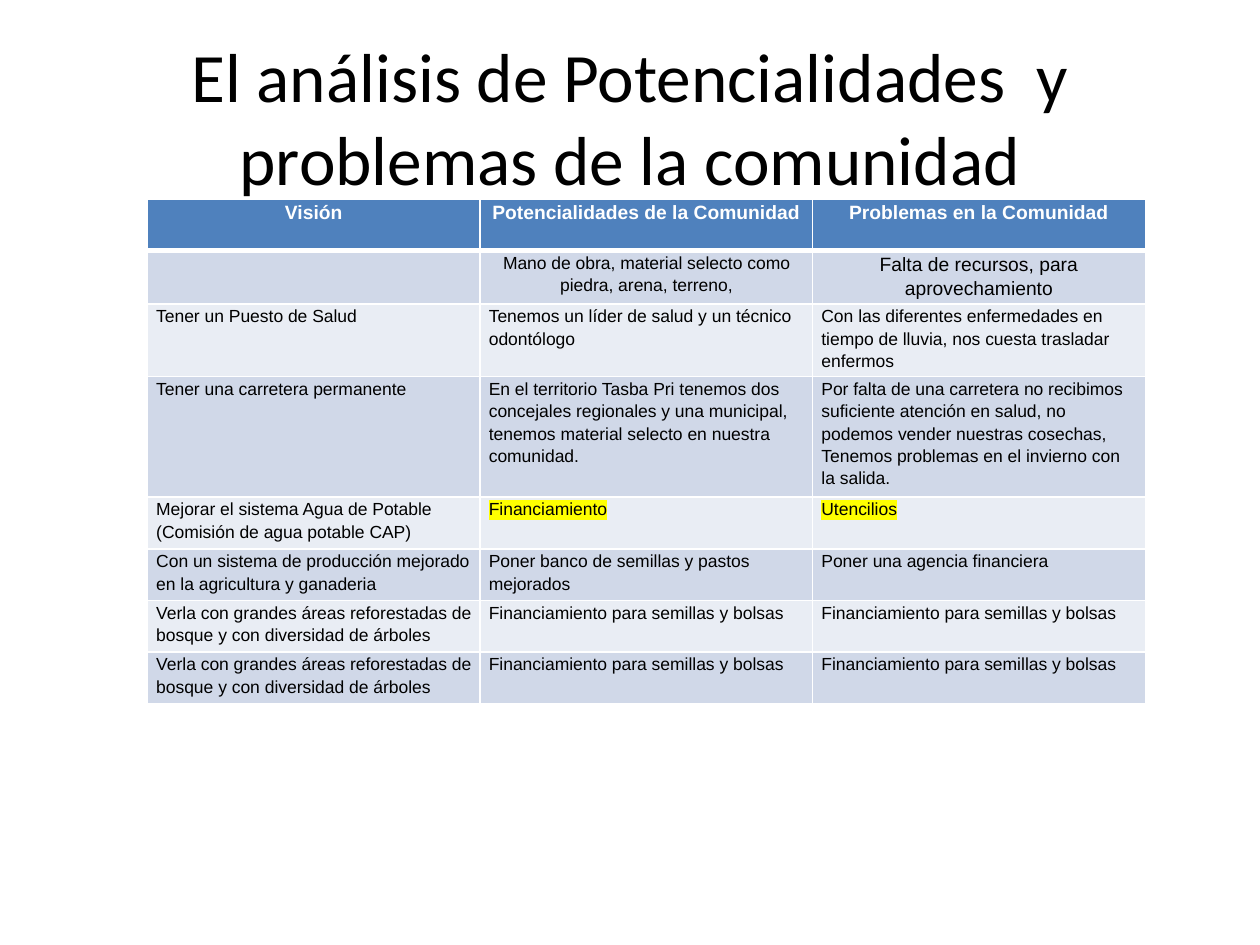
from lxml.etree import SubElement
from pptx import Presentation
from pptx.dml.color import RGBColor
from pptx.enum.text import MSO_ANCHOR, PP_ALIGN
from pptx.oxml.ns import qn
from pptx.util import Inches, Pt

THEME = {
    "title_font": "Calibri", "body_font": "Arial",
    "title_size": 39.6, "header_size": 11, "body_size": 10,
    "text": "000000", "header_text": "FFFFFF", "header_fill": "4F81BD",
    "bands": ("E9EDF4", "D0D8E8"), "border": "FFFFFF", "highlight": "FFFF00",
}
REFOREST = ("Verla con grandes áreas reforestadas de bosque y con diversidad de árboles",
            "Financiamiento para semillas y bolsas", "Financiamiento para semillas y bolsas")
ROWS = [
    ("Visión", "Potencialidades de la Comunidad", "Problemas en la Comunidad"),
    ("", "Mano de obra, material selecto como piedra, arena, terreno,",
     "Falta de recursos, para aprovechamiento"),
    ("Tener un Puesto de Salud", "Tenemos un líder de salud y un técnico odontólogo",
     "Con las diferentes enfermedades en tiempo de lluvia, nos cuesta trasladar enfermos"),
    ("Tener una carretera permanente",
     "En el territorio Tasba Pri tenemos dos concejales regionales y una municipal, "
     "tenemos material selecto en nuestra comunidad.",
     "Por falta de una carretera no recibimos suficiente atención en salud, no podemos vender "
     "nuestras cosechas, Tenemos problemas en el invierno con la salida."),
    ("Mejorar el sistema Agua de Potable (Comisión de agua potable CAP)",
     "Financiamiento", "Utencilios"),
    ("Con un sistema de producción mejorado en la agricultura y ganaderia",
     "Poner banco de semillas y pastos mejorados", "Poner una agencia financiera"),
    REFOREST,
    REFOREST,
]
HIGHLIGHTED = {"Financiamiento", "Utencilios"}


def write(paragraph, text, font, size, color, bold=False):
    run = paragraph.add_run()
    run.text = text
    run.font.color.rgb = RGBColor.from_string(color)
    for key, value in {"name": font, "size": Pt(size), "bold": bold}.items():
        setattr(run.font, key, value)
    if text in HIGHLIGHTED:
        mark = SubElement(run.font._element, qn("a:highlight"))
        SubElement(mark, qn("a:srgbClr"), val=THEME["highlight"])
        run.font.fill._xPr.find(qn("a:solidFill")).addnext(mark)


def add_borders(cell, widths):
    properties = cell._tc.get_or_add_tcPr()
    for index, (side, width) in enumerate(widths.items()):
        line = SubElement(properties, qn(f"a:ln{side}"), w=str(Pt(width)))
        fill = SubElement(line, qn("a:solidFill"))
        SubElement(fill, qn("a:srgbClr"), val=THEME["border"])
        properties.insert(index, line)


prs = Presentation()
prs.slide_width, prs.slide_height = Inches(10), Inches(7.5)
W, H = prs.slide_width, prs.slide_height
slide = prs.slides.add_slide(prs.slide_layouts[6])

# Title
heading = slide.shapes.add_textbox(int(W * 0.05), int(H * 0.04), int(W * 0.9), int(H / 6)).text_frame
heading.word_wrap = True
heading.vertical_anchor = MSO_ANCHOR.MIDDLE
heading.paragraphs[0].alignment = PP_ALIGN.CENTER
write(heading.paragraphs[0], "El análisis de Potencialidades  y problemas de la comunidad",
      THEME["title_font"], THEME["title_size"], THEME["text"])

# Table grid: three equal columns, rows that grow with their text
row_height = Inches(0.41)
analysis = slide.shapes.add_table(len(ROWS), 3, Inches(1.17), Inches(1.58),
                                  Inches(7.92), row_height * len(ROWS)).table

# Cells: header, centred first row, then left-aligned rows
cell_format = {"margin_left": Inches(0.07), "margin_right": Inches(0.07),
               "margin_top": 0, "margin_bottom": 0}
for r, texts in enumerate(ROWS):
    header = r == 0
    fill_color = THEME["header_fill"] if header else THEME["bands"][r % 2]
    text_color = THEME["header_text"] if header else THEME["text"]
    paragraph_format = {"alignment": PP_ALIGN.CENTER if r < 2 else PP_ALIGN.LEFT,
                        "line_spacing": 1.15, "space_after": Pt(10)}
    for c, text in enumerate(texts):
        cell = analysis.cell(r, c)
        for key, value in cell_format.items():
            setattr(cell, key, value)
        cell.fill.solid()
        cell.fill.fore_color.rgb = RGBColor.from_string(fill_color)
        add_borders(cell, {"L": 1, "R": 1, "T": 3 if r == 1 else 1, "B": 3 if header else 1})
        if text:
            paragraph = cell.text_frame.paragraphs[0]
            for key, value in paragraph_format.items():
                setattr(paragraph, key, value)
            large = header or (r, c) == (1, 2)
            write(paragraph, text, THEME["body_font"],
                  THEME["header_size" if large else "body_size"], text_color, header)

prs.save("out.pptx")
